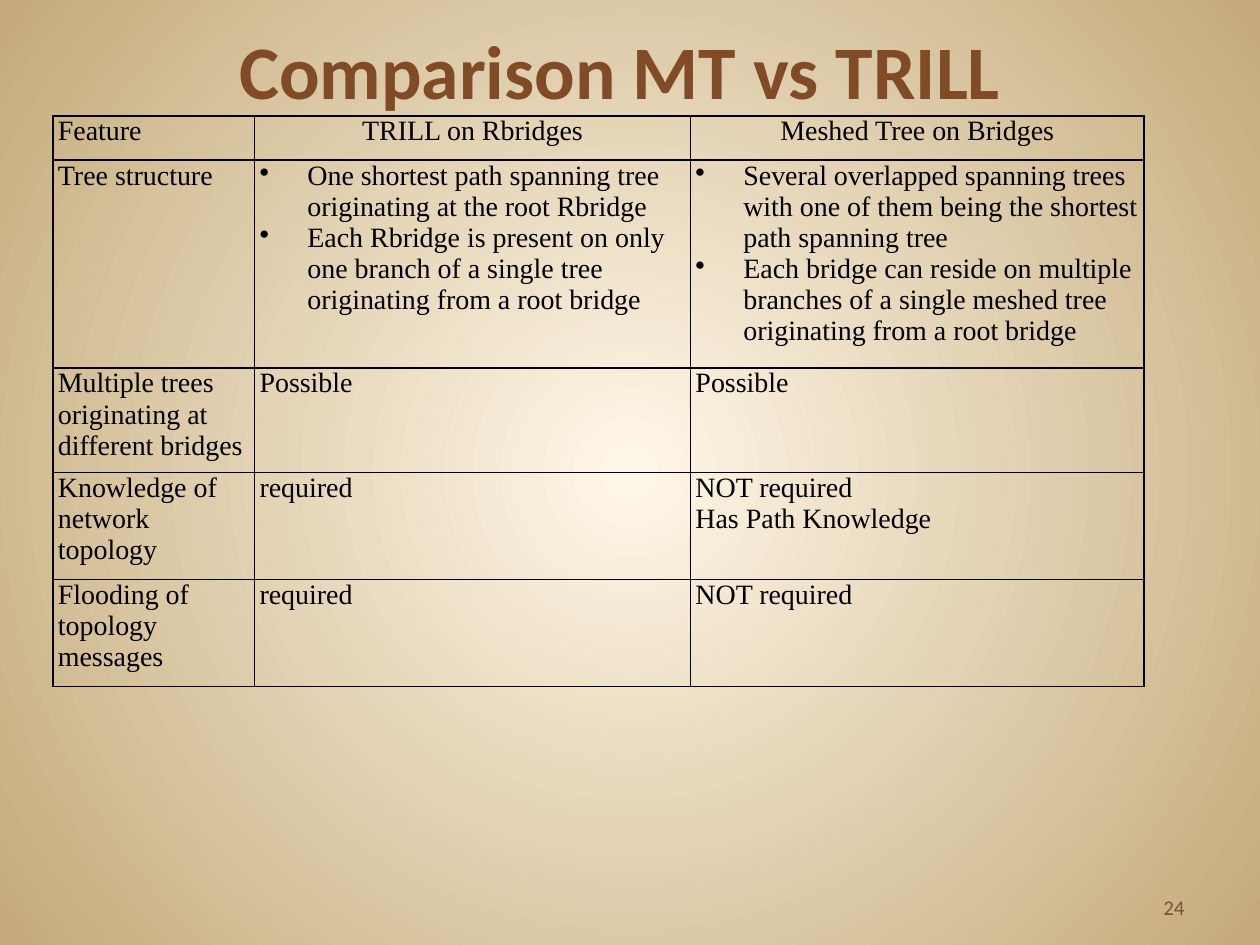
from dataclasses import dataclass

from lxml import etree
from pptx import Presentation
from pptx.dml.color import RGBColor
from pptx.enum.text import MSO_ANCHOR, PP_ALIGN
from pptx.oxml import parse_xml
from pptx.oxml.ns import nsdecls, qn
from pptx.util import Inches, Pt

LEFT, CENTER, RIGHT = PP_ALIGN.LEFT, PP_ALIGN.CENTER, PP_ALIGN.RIGHT
TOP, BOTTOM = MSO_ANCHOR.TOP, MSO_ANCHOR.BOTTOM


@dataclass(frozen=True)
class Theme:
    heading_font: str = "Calibri"
    table_font: str = "Times New Roman"
    title_size: float = 43.2
    table_size: float = 16
    number_size: float = 12
    title_color: str = "804B26"
    number_color: str = "795339"
    ink: str = "000000"
    glow: str = "FFF7E8"
    edge: str = "C4AA7A"


theme = Theme()


def style(para, font, size, color, align, bold=False):
    para.alignment = align
    para.font.name = font
    para.font.size = Pt(size)
    para.font.bold = bold
    para.font.color.rgb = RGBColor.from_string(color)


def add_borders(cell, widths):
    """Draw the cell's left, right, top and bottom lines, in that order."""
    properties = cell._tc.get_or_add_tcPr()
    for index, (side, width) in enumerate(zip("LRTB", widths)):
        properties.insert(index, parse_xml(
            f'<a:ln{side} {nsdecls("a")} w="{Pt(width)}"><a:solidFill>'
            f'<a:srgbClr val="{theme.ink}"/></a:solidFill></a:ln{side}>'))


deck = Presentation()
deck.slide_width, deck.slide_height = Inches(10), Inches(7.5)
page = deck.slides.add_slide(deck.slide_layouts[5])

# Background: a glow from the centre
backdrop = page.background.fill
backdrop.gradient()
for stop, color, position in zip(backdrop.gradient_stops, (theme.glow, theme.edge), (0, 1)):
    stop.color.rgb = RGBColor.from_string(color)
    stop.position = position
linear = next(page.background._cSld.iter(qn("a:lin")))
circle = etree.Element(qn("a:path"), path="circle")
etree.SubElement(circle, qn("a:fillToRect"), l="50000", t="50000", r="50000", b="50000")
linear.getparent().replace(linear, circle)

# Title
title = page.shapes.title
title.left, title.top = Inches(0.5), Inches(0.33)
title.width, title.height = Inches(9), Inches(0.58)
frame = title.text_frame
frame.text = "Comparison MT vs TRILL"
frame.vertical_anchor = BOTTOM
frame.margin_left = frame.margin_top = frame.margin_bottom = 0
frame.margin_right = Inches(0.16)
style(frame.paragraphs[0], theme.heading_font, theme.title_size, theme.title_color,
      CENTER, bold=True)

# Comparison table: each cell is a list of paragraphs
rows = [
    (["Feature"], ["TRILL on Rbridges"], ["Meshed Tree on Bridges"]),
    (["Tree structure"],
     ["One shortest path spanning tree originating at the root Rbridge",
      "Each Rbridge is present on only one branch of a single tree "
      "originating from a root bridge"],
     ["Several overlapped spanning trees with one of them being the shortest "
      "path spanning tree",
      "Each bridge can reside on multiple branches of a single meshed tree "
      "originating from a root bridge"]),
    (["Multiple trees originating at different bridges"], ["Possible"], ["Possible"]),
    (["Knowledge of network topology"], ["required"],
     ["NOT required", "Has Path Knowledge"]),
    (["Flooding of topology messages"], ["required"], ["NOT required"]),
]
column_widths = (1.6, 3.46, 3.6)
row_heights = (0.35, 1.65, 0.83, 0.85, 0.85)
HEADER_ROW, BULLET_ROW = 0, 1

table = page.shapes.add_table(
    len(rows), len(column_widths), Inches(0.42), Inches(0.92),
    Inches(sum(column_widths)), Inches(sum(row_heights))).table
table.first_row = table.horz_banding = False
for column, width in zip(table.columns, column_widths):
    column.width = Inches(width)

for r, (entries, height) in enumerate(zip(rows, row_heights)):
    table.rows[r].height = Inches(height)
    for c, lines in enumerate(entries):
        cell = table.cell(r, c)
        cell.fill.background()
        cell.vertical_anchor = TOP
        cell.margin_left = cell.margin_right = Inches(0.04)
        cell.margin_top = cell.margin_bottom = 0
        above = 1.5 if r == HEADER_ROW + 1 else 1
        below = 1.5 if r == HEADER_ROW else 1
        add_borders(cell, (1, 1, above, below))
        cell.text = "\n".join(lines)
        for para in cell.text_frame.paragraphs:
            style(para, theme.table_font, theme.table_size, theme.ink,
                  CENTER if r == HEADER_ROW and c > 0 else LEFT)
            if r == BULLET_ROW and c > 0:
                properties = para._p.get_or_add_pPr()
                properties.set("marL", str(Inches(0.38)))
                properties.set("indent", str(-Inches(0.38)))
                properties.insert(0, parse_xml(f'<a:buChar {nsdecls("a")} char="•"/>'))

# Page number
number = page.shapes.add_textbox(Inches(7.17), Inches(6.83), Inches(2.33), Inches(0.52))
frame = number.text_frame
frame.word_wrap = True
frame.vertical_anchor = BOTTOM
frame.text = "24"
style(frame.paragraphs[0], theme.heading_font, theme.number_size, theme.number_color, RIGHT)

deck.save("out.pptx")
